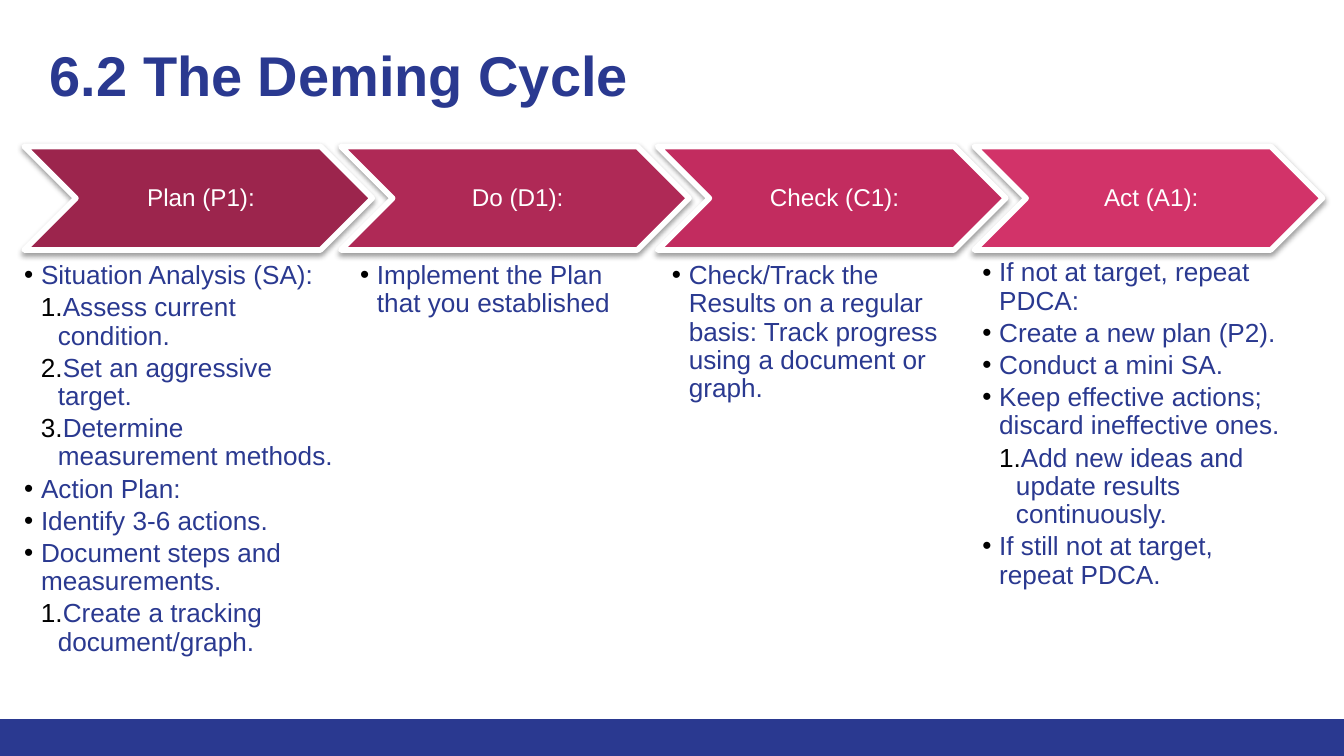
import dataclasses

import pptx
import pptx.dml.color
import pptx.enum.shapes
import pptx.enum.text
import pptx.oxml
import pptx.oxml.ns
import pptx.util

Inches = pptx.util.Inches
Pt = pptx.util.Pt
RGB = pptx.dml.color.RGBColor.from_string
SHAPE = pptx.enum.shapes.MSO_SHAPE
ALIGN = pptx.enum.text.PP_ALIGN
ANCHOR = pptx.enum.text.MSO_ANCHOR
FIT = pptx.enum.text.MSO_AUTO_SIZE
NS = pptx.oxml.ns.nsdecls("a")


@dataclasses.dataclass(frozen=True)
class Theme:
    font: str = "Arial"
    navy: str = "2A3990"
    white: str = "FFFFFF"
    black: str = "000000"
    title: int = 30
    step: int = 13
    body: int = 14


@dataclasses.dataclass(frozen=True)
class Item:
    text: str
    level: int = 0


@dataclasses.dataclass(frozen=True)
class Stage:
    name: str
    fill: str
    left: float
    top: float
    width: float
    items: tuple[Item, ...]


THEME = Theme()
WIDTH = 10
HEIGHT = WIDTH * 9 / 16
INDENT = 1 / 8
FIRST, LAST = 0.18, 7.25
STAGES = (
    Stage("Plan (P1):", "9C254D", 0.18, 1.95, 2.35, (
        Item("Situation Analysis (SA):"),
        Item("Assess current condition.", 1),
        Item("Set an aggressive target.", 1),
        Item("Determine measurement methods.", 1),
        Item("Action Plan:"),
        Item("Identify 3-6 actions."),
        Item("Document steps and measurements."),
        Item("Create a tracking document/graph.", 1),
    )),
    Stage("Do (D1):", "AF2956", 2.68, 1.95, 2.16, (
        Item("Implement the Plan that you established"),
    )),
    Stage("Check (C1):", "C22C5F", 5, 1.95, 2.16, (
        Item("Check/Track the Results on a regular basis: "
             "Track progress using a document or graph."),
    )),
    Stage("Act (A1):", "D23369", 7.31, 1.93, 2.27, (
        Item("If not at target, repeat PDCA:"),
        Item("Create a new plan (P2)."),
        Item("Conduct a mini SA."),
        Item("Keep effective actions; discard ineffective ones."),
        Item("Add new ideas and update results continuously.", 1),
        Item("If still not at target, repeat PDCA."),
    )),
)


def apply(target, values: dict) -> None:
    for name, value in values.items():
        setattr(target, name, value)


def pad(frame, left: float, top: float, right: float, base: float) -> None:
    """Set the inner margins of a text frame in inches."""
    apply(frame, {"margin_left": Inches(left), "margin_top": Inches(top),
                  "margin_right": Inches(right), "margin_bottom": Inches(base)})


def write(para, text: str, size: int, color: str, bold: bool = False) -> None:
    run = para.add_run()
    run.text = text
    apply(run.font, {"name": THEME.font, "size": Pt(size), "bold": bold})
    run.font.color.rgb = RGB(color)


def mark(para, level: int) -> None:
    """Hang a bullet at level 0, or a number at level 1."""
    props = para._p.get_or_add_pPr()
    props.set("marL", str(Inches(INDENT * (level + 1))))
    props.set("indent", str(Inches(-INDENT)))
    sign = '<a:buAutoNum {} type="arabicPeriod"/>' if level else '<a:buChar {} char="•"/>'
    for xml in (f'<a:buClr {NS}><a:srgbClr val="{THEME.black}"/></a:buClr>',
                f'<a:buFont {NS} typeface="{THEME.font}"/>',
                sign.format(NS)):
        props.append(pptx.oxml.parse_xml(xml))


def shade(shape) -> None:
    """Drop a soft shadow straight down."""
    shape.shadow.inherit = False
    effects = shape._element.spPr.find(pptx.oxml.ns.qn("a:effectLst"))
    effects.append(pptx.oxml.parse_xml(
        f'<a:outerShdw {NS} blurRad="{Pt(3.1)}" dist="{Pt(1.6)}" dir="5400000" '
        f'rotWithShape="0"><a:srgbClr val="{THEME.black}">'
        '<a:alpha val="38000"/></a:srgbClr></a:outerShdw>'))


def draw_title(slide) -> None:
    title = slide.shapes.title
    apply(title, {"left": Inches(0.27), "top": Inches(0.2),
                  "width": Inches(9.48), "height": Inches(0.89)})
    frame = title.text_frame
    apply(frame, {"auto_size": FIT.NONE, "word_wrap": True,
                  "vertical_anchor": ANCHOR.TOP})
    pad(frame, 0.1, 0.1, 0.1, 0.1)
    para = frame.paragraphs[0]
    para.alignment = ALIGN.LEFT
    write(para, "6.2 The Deming Cycle", THEME.title, THEME.navy, True)


def draw_bar(slide) -> None:
    bar = slide.shapes.add_shape(
        SHAPE.RECTANGLE, 0, Inches(5.35), Inches(WIDTH), Inches(HEIGHT - 5.35))
    bar.shadow.inherit = False
    bar.fill.solid()
    bar.fill.fore_color.rgb = RGB(THEME.navy)
    bar.line.fill.background()


def draw_arrow(slide, stage: Stage, left: float) -> None:
    arrow = slide.shapes.add_shape(
        SHAPE.CHEVRON, Inches(left), Inches(1.09), Inches(2.59), Inches(0.77))
    arrow.fill.solid()
    arrow.fill.fore_color.rgb = RGB(stage.fill)
    arrow.line.color.rgb = RGB(THEME.white)
    arrow.line.width = Pt(3)
    shade(arrow)
    frame = arrow.text_frame
    apply(frame, {"word_wrap": True, "vertical_anchor": ANCHOR.MIDDLE})
    pad(frame, 0.04, 0.02, 0, 0.02)
    para = frame.paragraphs[0]
    apply(para, {"alignment": ALIGN.CENTER, "line_spacing": 0.9})
    write(para, stage.name, THEME.step, THEME.white)


def draw_list(slide, stage: Stage) -> None:
    box = slide.shapes.add_textbox(Inches(stage.left), Inches(stage.top),
                                   Inches(stage.width), Inches(2.88))
    frame = box.text_frame
    apply(frame, {"word_wrap": True, "vertical_anchor": ANCHOR.TOP})
    pad(frame, 0, 0, 0, 0)
    for index, item in enumerate(stage.items):
        para = frame.add_paragraph() if index else frame.paragraphs[0]
        apply(para, {"level": item.level, "alignment": ALIGN.LEFT,
                     "line_spacing": 0.9, "space_after": Pt(2.1)})
        mark(para, item.level)
        write(para, item.text, THEME.body, THEME.navy)


def main() -> None:
    deck = pptx.Presentation()
    apply(deck, {"slide_width": Inches(WIDTH), "slide_height": Inches(HEIGHT)})
    slide = deck.slides.add_slide(deck.slide_layouts[5])
    draw_bar(slide)
    draw_title(slide)
    pitch = (LAST - FIRST) / (len(STAGES) - 1)
    for index, stage in enumerate(STAGES):
        draw_arrow(slide, stage, FIRST + index * pitch)
        draw_list(slide, stage)
    deck.save("out.pptx")


if __name__ == "__main__":
    main()
